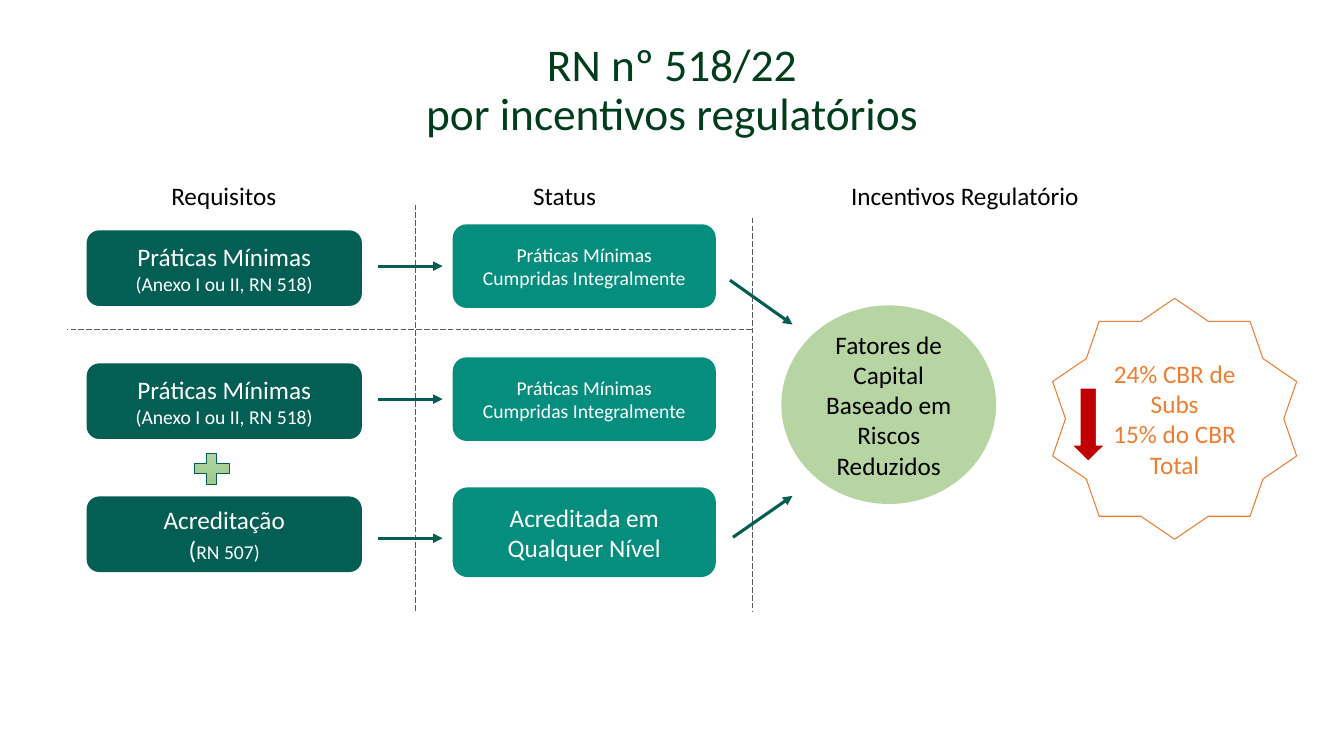
from lxml import etree
from pptx import Presentation
from pptx.dml.color import RGBColor
from pptx.enum.dml import MSO_LINE
from pptx.enum.shapes import MSO_CONNECTOR, MSO_SHAPE
from pptx.enum.text import MSO_ANCHOR, PP_ALIGN
from pptx.oxml.ns import qn
from pptx.util import Inches, Pt

STRAIGHT = MSO_CONNECTOR.STRAIGHT
LONG_DASH = MSO_LINE.LONG_DASH
ROUNDED, OVAL = MSO_SHAPE.ROUNDED_RECTANGLE, MSO_SHAPE.OVAL
STAR, DOWN_ARROW, PLUS = MSO_SHAPE.STAR_10_POINT, MSO_SHAPE.DOWN_ARROW, MSO_SHAPE.MATH_PLUS
TOP, MIDDLE, BOTTOM = MSO_ANCHOR.TOP, MSO_ANCHOR.MIDDLE, MSO_ANCHOR.BOTTOM
CENTER = PP_ALIGN.CENTER

FONT = "Calibri"
TITLE_GREEN = RGBColor(0x00, 0x3E, 0x1B)
DARK_TEAL = RGBColor(0x03, 0x5E, 0x53)
TEAL = RGBColor(0x05, 0x8D, 0x7D)
GREEN = RGBColor(0x70, 0xAD, 0x47)
PLUS_LIGHT = RGBColor(0xB5, 0xD5, 0xA7)
PLUS_DARK = RGBColor(0x9C, 0xC9, 0x87)
ORANGE = RGBColor(0xED, 0x7D, 0x31)
RED = RGBColor(0xC0, 0x00, 0x00)
GRAY = RGBColor(0x59, 0x59, 0x59)
BLACK = RGBColor(0x00, 0x00, 0x00)
WHITE = RGBColor(0xFF, 0xFF, 0xFF)

MINIMUM = [[("Práticas Mínimas", 18)], [("(Anexo I ou II, RN 518)", 14)]]
ACCREDITATION = [[("Acreditação", 18)], [("(", 18), ("RN 507)", 14)]]
FULFILLED = [[("Práticas Mínimas", 14)], [("Cumpridas Integralmente", 14)]]
ACCREDITED = [[("Acreditada em Qualquer Nível", 18)]]


def write(frame, paragraphs, color=BLACK, anchor=MIDDLE, spacing=None):
    """Fill a text frame with centred paragraphs of (text, size) runs."""
    frame.word_wrap = True
    frame.vertical_anchor = anchor
    for index, pieces in enumerate(paragraphs):
        paragraph = frame.add_paragraph() if index else frame.paragraphs[0]
        paragraph.alignment = CENTER
        paragraph.line_spacing = spacing
        for text, size in pieces:
            run = paragraph.add_run()
            run.text = text
            run.font.name, run.font.size = FONT, Pt(size)
            run.font.color.rgb = color


def add_label(slide, box, paragraphs, **style):
    """Add a text box with formatted text."""
    label = slide.shapes.add_textbox(*map(Inches, box))
    write(label.text_frame, paragraphs, **style)


def add_figure(slide, preset, box, fill=None, line=None, width=0.75):
    """Add a preset shape with an optional fill and outline."""
    figure = slide.shapes.add_shape(preset, *map(Inches, box))
    figure.shadow.inherit = False
    if fill is None:
        figure.fill.background()
    else:
        figure.fill.solid()
        figure.fill.fore_color.rgb = fill
    if line is None:
        figure.line.fill.background()
    else:
        figure.line.color.rgb = line
        figure.line.width = Pt(width)
    return figure


def add_line(slide, start, end, color, width):
    """Add a straight line without shadow."""
    line = slide.shapes.add_connector(STRAIGHT, *map(Inches, (*start, *end)))
    line.line.color.rgb = color
    line.line.width = Pt(width)
    etree.SubElement(line._element.spPr, qn("a:effectLst"))
    return line


def add_divider(slide, start, end):
    """Add a thin dashed divider."""
    add_line(slide, start, end, GRAY, 0.5).line.dash_style = LONG_DASH


def add_arrow(slide, start, end):
    """Add a teal arrow."""
    arrow = add_line(slide, start, end, DARK_TEAL, 2.25)
    etree.SubElement(arrow.line._get_or_add_ln(), qn("a:tailEnd"), type="triangle")


def add_headings(slide, top):
    """Place the three column headings around their centres."""
    width = 3
    for heading, center in (("Requisitos", 2.22), ("Status", 5.6),
                            ("Incentivos Regulatório", 9.57)):
        add_label(slide, (center - width / 2, top, width, 0.4), [[(heading, 18)]], anchor=TOP)


def add_dividers(slide, left, top, right, bottom):
    """Separate the columns and the two groups of requirements."""
    add_divider(slide, (4.12, top), (4.12, bottom))
    add_divider(slide, (right, top + 0.13), (right, bottom))
    add_divider(slide, (right, 3.27), (left, 3.27))


def add_step(slide, left, center, requirement, status, status_height):
    """Place a requirement, its arrow and the resulting status on one row."""
    requirement_box = (left, center - 0.375, 2.73, 0.75)
    status_box = (left + 3.63, center - 0.02 - status_height / 2, 2.61, status_height)
    for box, color, paragraphs in ((requirement_box, DARK_TEAL, requirement),
                                   (status_box, TEAL, status)):
        card = add_figure(slide, ROUNDED, box, color)
        write(card.text_frame, paragraphs, WHITE)
    arrow_y = center - 0.02 + (status_height - 0.83)
    add_arrow(slide, (left + 2.89, arrow_y), (left + 3.53, arrow_y))


def add_plus(slide, box):
    """Place the plus sign that joins two requirements."""
    plus = add_figure(slide, PLUS, box, PLUS_LIGHT, DARK_TEAL, 0.5)
    plus.fill.gradient()
    plus.fill.gradient_angle = 270
    for stop, color in zip(plus.fill.gradient_stops, (PLUS_LIGHT, PLUS_DARK)):
        stop.color.rgb = color


def add_factors(slide, left, top, width, height):
    """Place the translucent ellipse and the arrows leading to it."""
    ellipse = add_figure(slide, OVAL, (left, top, width, height), GREEN)
    tint = ellipse._element.spPr.find(qn("a:solidFill"))[0]
    etree.SubElement(tint, qn("a:alpha"), val="50000")
    write(ellipse.text_frame, [[("Fatores de Capital Baseado em Riscos Reduzidos", 18)]])
    tip = left + 0.11
    add_arrow(slide, (left - 0.51, top - 0.25), (tip, top + 0.19))
    add_arrow(slide, (left - 0.48, top + height + 0.33), (tip, top + height - 0.08))


def add_reduction(slide, left, top, width, height):
    """Place the star with the reductions and its red arrow."""
    star = add_figure(slide, STAR, (left, top, width, height), line=ORANGE)
    write(star.text_frame, [[("24% CBR de Subs", 18)], [("15% do CBR Total", 18)]], ORANGE)
    add_figure(slide, DOWN_ARROW, (left + 0.19, top + 0.89, 0.33, 0.73), RED, WHITE, 1)


def main():
    """Build the slide on regulatory incentives."""
    deck = Presentation()
    deck.slide_width, deck.slide_height = Inches(13.33), Inches(7.5)
    slide = deck.slides.add_slide(deck.slide_layouts[6])
    add_label(slide, (0, 0.47, 13.33, 0.97),
              [[("RN nº 518/22", 32.4)], [("por incentivos regulatórios", 32.4)]],
              color=TITLE_GREEN, anchor=BOTTOM, spacing=0.9)
    add_headings(slide, 1.74)
    add_dividers(slide, 0.66, 2.03, 7.46, 6.07)
    steps = ((MINIMUM, FULFILLED, 0.83), (MINIMUM, FULFILLED, 0.83),
             (ACCREDITATION, ACCREDITED, 0.89))
    for row, step in enumerate(steps):
        add_step(slide, 0.86, 2.66 + row * 1.32, *step)
    add_plus(slide, (1.86, 4.44, 0.48, 0.42))
    add_factors(slide, 7.75, 3.03, 2.13, 1.97)
    add_reduction(slide, 10.44, 2.96, 2.42, 2.39)
    deck.save("out.pptx")


if __name__ == "__main__":
    main()
